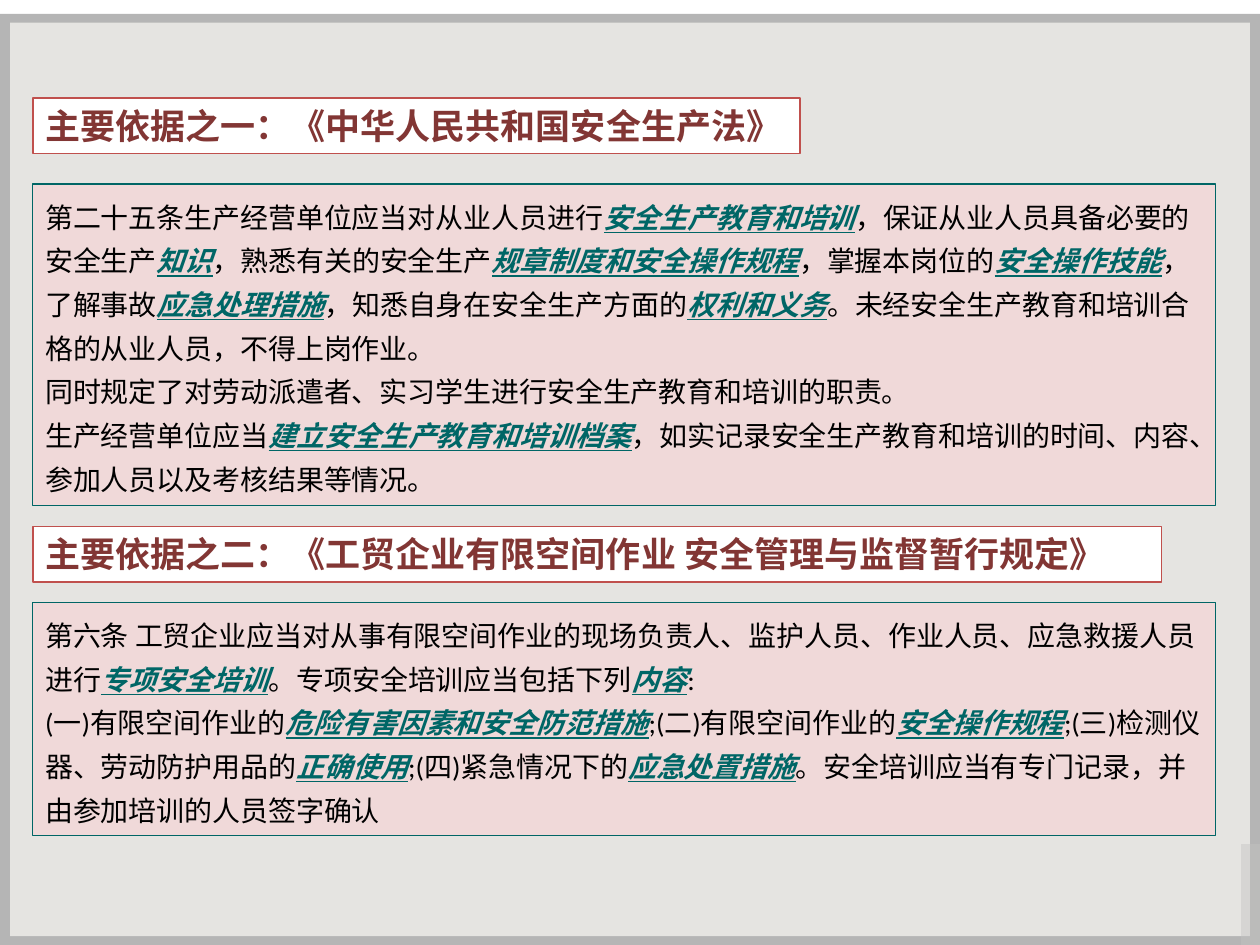
from dataclasses import dataclass

from lxml import etree
from pptx import Presentation
from pptx.dml.color import RGBColor
from pptx.enum.shapes import MSO_SHAPE
from pptx.enum.text import MSO_ANCHOR, MSO_AUTO_SIZE, PP_ALIGN
from pptx.oxml.ns import qn
from pptx.util import Inches, Pt

RECT = MSO_SHAPE.RECTANGLE
TOP = MSO_ANCHOR.TOP
LEFT = PP_ALIGN.LEFT
FIT_SHAPE = MSO_AUTO_SIZE.SHAPE_TO_FIT_TEXT


@dataclass(frozen=True)
class Theme:
    font: str = "Calibri"
    heading_size: int = 20
    body_size: int = 16
    heading: str = "823634"
    heading_line: str = "C0504D"
    heading_fill: str = "FFFFFF"
    body: str = "000000"
    body_fill: str = "F0D9D9"
    accent: str = "006666"
    frame: str = "B5B5B5"
    panel: str = "F6F4F0"
    tab: str = "C3C3C1"


THEME = Theme()
MARGIN = 0.26
BODY_WIDTH = 9.39
HEADING_HEIGHT = 0.44

LAW_TITLE = "主要依据之一：《中华人民共和国安全生产法》"
LAW_TEXT = [
    "第二十五条生产经营单位应当对从业人员进行*安全生产教育和培训*，保证从业人员具备必要的安全生产*知识*，"
    "熟悉有关的安全生产*规章制度和安全操作规程*，掌握本岗位的*安全操作技能*，了解事故*应急处理措施*，"
    "知悉自身在安全生产方面的*权利和义务*。未经安全生产教育和培训合格的从业人员，不得上岗作业。",
    "同时规定了对劳动派遣者、实习学生进行安全生产教育和培训的职责。",
    "生产经营单位应当*建立安全生产教育和培训档案*，如实记录安全生产教育和培训的时间、内容、"
    "参加人员以及考核结果等情况。",
]
RULES_TITLE = "主要依据之二：《工贸企业有限空间作业 安全管理与监督暂行规定》"
RULES_TEXT = [
    "第六条 工贸企业应当对从事有限空间作业的现场负责人、监护人员、作业人员、应急救援人员进行"
    "*专项安全培训*。专项安全培训应当包括下列*内容*:",
    "(一)有限空间作业的*危险有害因素和安全防范措施*;(二)有限空间作业的*安全操作规程*;"
    "(三)检测仪器、劳动防护用品的*正确使用*;(四)紧急情况下的*应急处置措施*。"
    "安全培训应当有专门记录，并由参加培训的人员签字确认",
]


def add_rect(s, box, fill, line=None, weight=1, alpha=None):
    sp = s.shapes.add_shape(RECT, *map(Inches, box))
    sp.shadow.inherit = False
    sp.fill.solid()
    sp.fill.fore_color.rgb = RGBColor.from_string(fill)
    if alpha is not None:
        color = sp.fill._xPr.find(qn("a:solidFill"))[0]
        etree.SubElement(color, qn("a:alpha"), val=str(alpha * 1000))
    if line:
        sp.line.color.rgb = RGBColor.from_string(line)
        sp.line.width = Pt(weight)
    else:
        sp.line.fill.background()
    return sp


def set_font(p, size, color):
    p.alignment = LEFT
    p.font.name = THEME.font
    p.font.size = Pt(size)
    p.font.color.rgb = RGBColor.from_string(color)


def set_frame(sp, wrap):
    tf = sp.text_frame
    tf.word_wrap = wrap
    tf.auto_size = FIT_SHAPE
    tf.vertical_anchor = TOP
    return tf


def add_background(s):
    add_rect(s, (0, 0.11, 10, 7.39), THEME.frame)
    add_rect(s, (0.08, 0.18, 9.84, 7.25), THEME.panel, alpha=75)
    add_rect(s, (9.85, 6.7, 0.16, 0.84), THEME.tab, alpha=43)


def add_heading(s, box, text):
    sp = add_rect(s, box, THEME.heading_fill, THEME.heading_line)
    p = set_frame(sp, False).paragraphs[0]
    p.text = text
    set_font(p, THEME.heading_size, THEME.heading)
    p.font.bold = True


def add_body(s, box, paragraphs):
    sp = add_rect(s, box, THEME.body_fill, THEME.accent, 0.75)
    tf = set_frame(sp, True)
    for i, text in enumerate(paragraphs):
        p = tf.add_paragraph() if i else tf.paragraphs[0]
        p.line_spacing = 1.3
        set_font(p, THEME.body_size, THEME.body)
        for j, part in enumerate(text.split("*")):
            if not part:
                continue
            r = p.add_run()
            r.text = part
            if j % 2:
                r.font.bold = r.font.italic = r.font.underline = True
                r.font.color.rgb = RGBColor.from_string(THEME.accent)


def add_section(s, top, heading_width, title, body_top, body_height, text):
    add_heading(s, (MARGIN, top, heading_width, HEADING_HEIGHT), title)
    add_body(s, (MARGIN, body_top, BODY_WIDTH, body_height), text)


def main():
    prs = Presentation()
    prs.slide_width, prs.slide_height = Inches(10), Inches(7.5)
    s = prs.slides.add_slide(prs.slide_layouts[6])
    add_background(s)
    add_section(s, 0.78, 6.09, LAW_TITLE, 1.46, 2.55, LAW_TEXT)
    add_section(s, 4.18, 8.96, RULES_TITLE, 4.78, 1.85, RULES_TEXT)
    prs.save("out.pptx")


if __name__ == "__main__":
    main()
